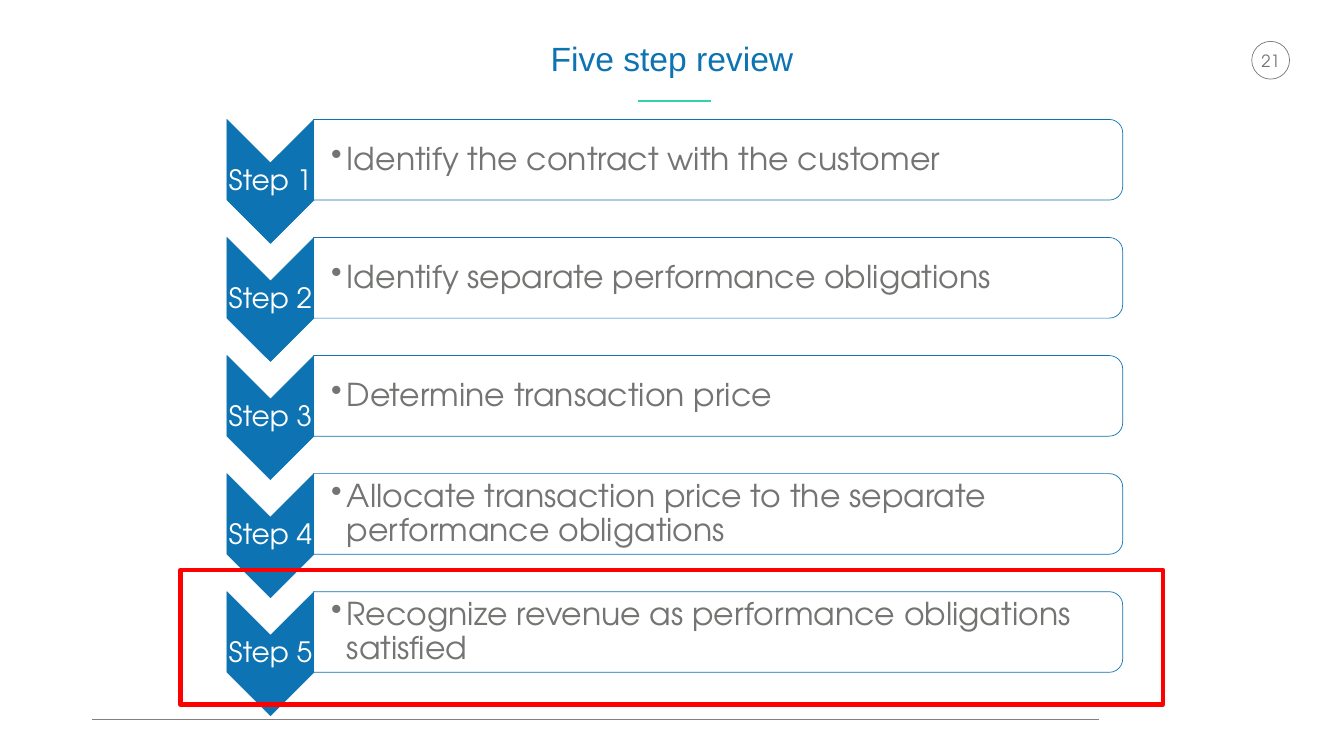
from lxml import etree
from pptx import Presentation
from pptx import util as u
from pptx.dml.color import RGBColor
from pptx.enum import shapes as s, text as t
from pptx.oxml import ns

# Content
TITLE = "Five step review"
PAGE = "21"
STEPS = [
    "Identify the contract with the customer",
    "Identify separate performance obligations",
    "Determine transaction price",
    "Allocate transaction price to the separate performance obligations",
    "Recognize revenue as performance obligations satisfied",
]

THEME = {
    "blue": "0D73B2", "grey": "737572", "mint": "33D1AD", "rule": "808080",
    "red": "FF0000", "white": "FFFFFF",
    "head": "Arial", "body": "TeX Gyre Adventor",
    "title": 48, "item": 45, "step": 40, "page": 24,
}

# Layout, in px (100 to the inch)
SCALE = 9144
WIDE, HIGH = 2666, 1500
TOP, PITCH = 237, 234.25
CHEV = (450, 173, 246)  # left, width, height
BAR = (622, 1605, 160)


def px(n):
    return u.Emu(round(n * SCALE))


def color(name):
    return RGBColor.from_string(THEME[name])


def outline(shape, name, width):
    shape.line.color.rgb = color(name)
    shape.line.width = u.Pt(width)


def add_line(x1, x2, y, name, width):
    line = slide.shapes.add_connector(
        s.MSO_CONNECTOR.STRAIGHT, px(x1), px(y), px(x2), px(y))
    outline(line, name, width)
    etree.SubElement(line._element.spPr, ns.qn("a:effectLst"))


def add_box(kind, x, y, w, h, edge, width=1, fill=None, turned=False):
    """Place a shape in the box as seen; a turned one is rotated 90 degrees."""
    if turned:
        x, y, w, h = x + (w - h) / 2, y + (h - w) / 2, h, w
    box = slide.shapes.add_shape(kind, px(x), px(y), px(w), px(h))
    box.shadow.inherit = False
    box.rotation = 90 if turned else 0
    if fill:
        box.fill.solid()
        box.fill.fore_color.rgb = color(fill)
    else:
        box.fill.background()
    outline(box, edge, width)
    return box


def write(shape, words, font, size, name, ins, align=None, wrap=True,
          anchor=t.MSO_ANCHOR.TOP, bullet=False, space=0.9):
    frame = shape.text_frame
    frame.auto_size = t.MSO_AUTO_SIZE.NONE
    frame.word_wrap = wrap
    frame.vertical_anchor = anchor
    (frame.margin_left, frame.margin_top,
     frame.margin_right, frame.margin_bottom) = map(px, ins)
    para = frame.paragraphs[0]
    para.text = words
    if bullet:
        props = para._p.get_or_add_pPr()
        props.set("marL", str(px(31)))
        props.set("indent", str(px(-31)))
        etree.SubElement(props, ns.qn("a:buChar"), char="•")
    para.alignment = align
    para.line_spacing = space
    para.font.name = THEME[font]
    para.font.size = u.Pt(THEME[size])
    para.font.color.rgb = color(name)


def add_text(x, y, w, h, *args, **opts):
    write(slide.shapes.add_textbox(px(x), px(y), px(w), px(h)), *args, **opts)


deck = Presentation()
deck.slide_width, deck.slide_height = px(WIDE), px(HIGH)
slide = deck.slides.add_slide(deck.slide_layouts[5])
MID = t.PP_ALIGN.CENTER

# Title, rules and page number
title = slide.shapes.title
title.left, title.top, title.width, title.height = map(px, (1058, 79, 550, 83))
write(title, TITLE, "head", "title", "blue", (10, 5, 10, 5), MID, wrap=False)
add_line(183, 2180, 1428, "rule", 1)
add_line(1266, 1410, 200, "mint", 3)
add_text(2480, 90, 81, 61, PAGE, "body", "page", "grey", (20, 10, 20, 10),
         MID, wrap=False, space=1.0)
add_box(s.MSO_SHAPE.OVAL, 2483, 82, 75, 75, "grey")

# Steps
for i, item in enumerate(STEPS):
    top = TOP + i * PITCH
    x, w, h = CHEV
    add_box(s.MSO_SHAPE.CHEVRON, x, top, w, h, "blue", fill="blue", turned=True)
    add_text(x, top + 86, w, 74, f"Step {i + 1}", "body", "step", "white",
             (3, 3, 3, 3), MID, anchor=t.MSO_ANCHOR.MIDDLE)
    x, w, h = BAR
    bar = add_box(s.MSO_SHAPE.ROUND_2_SAME_RECTANGLE, x, top, w, h, "blue",
                  fill="white", turned=True)
    tint = bar._element.spPr.find(ns.qn("a:solidFill"))[0]
    etree.SubElement(tint, ns.qn("a:alpha"), val="90000")
    add_text(x, top + 8, w - 8, h - 15, item, "body", "item", "grey",
             (35, 3, 3, 3), anchor=t.MSO_ANCHOR.MIDDLE, bullet=True)

# Frame around the last step
add_box(s.MSO_SHAPE.RECTANGLE, 358, 1131, 1949, 267, "red", 6)

deck.save("out.pptx")
